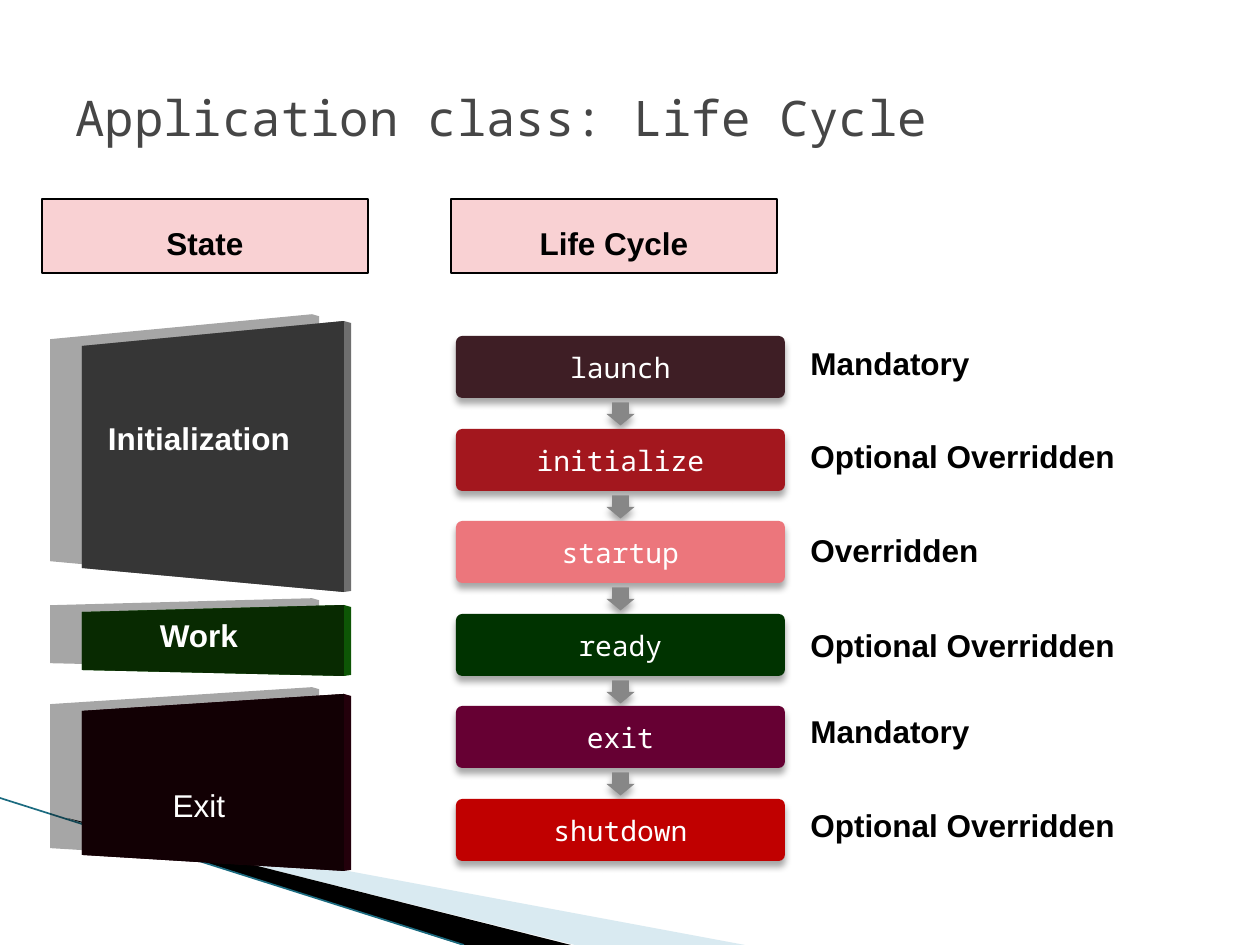
from dataclasses import dataclass

from lxml import etree
from pptx import Presentation
from pptx.dml.color import RGBColor
from pptx.enum.shapes import MSO_CONNECTOR, MSO_SHAPE
from pptx.enum.text import MSO_ANCHOR, PP_ALIGN
from pptx.oxml.ns import qn
from pptx.util import Emu, Pt

RECT, ROUNDED = MSO_SHAPE.RECTANGLE, MSO_SHAPE.ROUNDED_RECTANGLE
ARROW = MSO_SHAPE.RIGHT_ARROW
STRAIGHT = MSO_CONNECTOR.STRAIGHT
TOP, MIDDLE = MSO_ANCHOR.TOP, MSO_ANCHOR.MIDDLE
LEFT, CENTER = PP_ALIGN.LEFT, PP_ALIGN.CENTER

EMU_PER_PX = 914400 / 126
SANS, MONO = "Arial", "Noto Sans Mono"
BLACK, WHITE = "000000", "FFFFFF"

# Shared geometry, in px
STEP_LEFT, STEP_TOP, STEP_WIDTH, STEP_HEIGHT = 456, 336, 329, 62
STEP_PITCH = 92.6
ARROW_LENGTH, ARROW_WIDTH = 23, 28
PANEL_LEFT, PANEL_RIGHT, PANEL_DEPTH = 82, 344, 7
PANEL_TEXT_X = 199


@dataclass
class Step:
    method: str
    fill: str
    rule: str
    rule_top: int
    rule_width: int


@dataclass
class Panel:
    state: str
    face: str
    side: str
    left_edge: tuple[int, int]
    right_edge: tuple[int, int]
    text_y: int
    bold: bool = True


STEPS = [
    Step("launch", "3E1E25", "Mandatory", 338, 284),
    Step("initialize", "A3171E", "Optional Overridden", 431, 388),
    Step("startup", "EC767C", "Overridden", 525, 284),
    Step("ready", "003300", "Optional Overridden", 620, 388),
    Step("exit", "660033", "Mandatory", 706, 284),
    Step("shutdown", "C00000", "Optional Overridden", 800, 388),
]
PANELS = [
    Panel("Initialization", "363636", "6E6E6E", (346, 568), (321, 592), 438),
    Panel("Work", "082A01", "0D5505", (612, 670), (605, 676), 635),
    Panel("Exit", "120004", "23000B", (711, 855), (694, 871), 805, False),
]
HEADERS = {"State": 42, "Life Cycle": 451}


def px(length: float) -> Emu:
    return Emu(round(length * EMU_PER_PX))


def rgb(value: str) -> RGBColor:
    return RGBColor.from_string(value)


def paint(shape, fill: str, line: str | None = None) -> None:
    shape.shadow.inherit = False
    shape.fill.solid()
    shape.fill.fore_color.rgb = rgb(fill)
    if line:
        shape.line.color.rgb = rgb(line)
        shape.line.width = Pt(0.75)
    else:
        shape.line.fill.background()


def add_alpha(color, percent: int) -> None:
    etree.SubElement(color, qn("a:alpha"), val=str(percent * 1000))


def cast_shadow(shape, blur: float, distance: float, angle: int) -> None:
    effects = shape._element.spPr.find(qn("a:effectLst"))
    shadow = etree.SubElement(
        effects, qn("a:outerShdw"), blurRad=str(Pt(blur)), dist=str(Pt(distance)),
        dir=str(angle * 60000), algn="ctr", rotWithShape="0")
    add_alpha(etree.SubElement(shadow, qn("a:srgbClr"), val=BLACK), 35)


def write(shape, text: str, size: int, font: str, color: str, bold: bool = False,
          align=CENTER, anchor=MIDDLE, spacing: float = 1.0) -> None:
    frame = shape.text_frame
    frame.word_wrap = True
    frame.vertical_anchor = anchor
    paragraph = frame.paragraphs[0]
    paragraph.text = text
    paragraph.alignment = align
    paragraph.line_spacing = spacing
    paragraph.font.size = Pt(size)
    paragraph.font.name = font
    paragraph.font.bold = bold
    paragraph.font.color.rgb = rgb(color)


def add_box(slide, kind, left: int, top: int, width: int, height: int,
            fill: str, line: str | None = None):
    box = slide.shapes.add_shape(kind, px(left), px(top), px(width), px(height))
    paint(box, fill, line)
    return box


def add_polygon(slide, points: list[tuple[int, int]], fill: str):
    builder = slide.shapes.build_freeform(*points[0], scale=EMU_PER_PX)
    builder.add_line_segments(points[1:], close=True)
    polygon = builder.convert_to_shape()
    paint(polygon, fill)
    return polygon


def draw_corner(slide) -> None:
    pale = add_polygon(slide, [(69, 819), (745, 945), (575, 945)], "A0CBDC")
    add_alpha(pale._element.spPr.find(qn("a:solidFill"))[0], 40)
    add_polygon(slide, [(67, 818), (571, 945), (462, 945)], BLACK)
    edge = slide.shapes.add_connector(STRAIGHT, px(0), px(798), px(464), px(945))
    edge.line.color.rgb = rgb("1B6B80")
    edge.line.width = Pt(0.95)
    etree.SubElement(edge._element.spPr, qn("a:effectLst"))


def draw_step(slide, index: int, step: Step) -> None:
    top = STEP_TOP + round(index * STEP_PITCH)
    box = add_box(slide, ROUNDED, STEP_LEFT, top, STEP_WIDTH, STEP_HEIGHT, step.fill)
    box.adjustments[0] = 0.1
    cast_shadow(box, 4, 3, 90)
    write(box, step.method, 16, MONO, WHITE)

    if index < len(STEPS) - 1:
        arrow = add_box(slide, ARROW, STEP_LEFT + (STEP_WIDTH - ARROW_LENGTH) // 2,
                        top + STEP_HEIGHT + 2, ARROW_LENGTH, ARROW_WIDTH, "878787")
        arrow.rotation = 90
        arrow.adjustments[0] = 0.6
        cast_shadow(arrow, 4, 3, 90)

    rule = slide.shapes.add_textbox(px(798), px(step.rule_top), px(step.rule_width), px(50))
    write(rule, step.rule, 18, SANS, BLACK, True, LEFT, TOP)


def draw_panel(slide, panel: Panel) -> None:
    (left_top, left_bottom), (right_top, right_bottom) = panel.left_edge, panel.right_edge
    outer = PANEL_RIGHT + PANEL_DEPTH
    start, end = (PANEL_LEFT, left_top), (PANEL_LEFT, left_bottom)
    upper, lower = (PANEL_RIGHT, right_top), (PANEL_RIGHT, right_bottom)

    # Whole slab in the side colour, then the front face over it
    slab = add_polygon(slide, [start, upper, (outer, right_top + 2),
                               (outer, right_bottom - 1), lower, end], panel.side)
    cast_shadow(slab, 0, 18.7, 192)
    face = add_polygon(slide, [start, upper, lower, end], panel.face)

    # Margins move the label off the centre of the face
    frame = face.text_frame
    lift = right_top + right_bottom - 2 * panel.text_y
    frame.margin_left = 0
    frame.margin_right = px(PANEL_LEFT + PANEL_RIGHT - 2 * PANEL_TEXT_X)
    frame.margin_bottom = px(max(lift, 0))
    frame.margin_top = px(max(-lift, 0))
    write(face, panel.state, 18, SANS, WHITE, panel.bold)


def main() -> None:
    deck = Presentation()
    deck.slide_width, deck.slide_height = px(1260), px(945)
    slide = deck.slides.add_slide(deck.slide_layouts[5])

    draw_corner(slide)

    # Title
    title = slide.shapes.title
    title.left, title.top, title.width, title.height = px(63), px(38), px(1134), px(158)
    write(title, "Application class: Life Cycle", 28, MONO, "464646", align=LEFT)

    # Life cycle steps with their rules, then the states
    for index, step in enumerate(STEPS):
        draw_step(slide, index, step)
    for panel in PANELS:
        draw_panel(slide, panel)

    # Column headers
    for heading, left in HEADERS.items():
        header = add_box(slide, RECT, left, 199, 326, 74, "F9D1D3", BLACK)
        write(header, heading, 18, SANS, BLACK, True, anchor=TOP, spacing=1.5)

    deck.save("out.pptx")


if __name__ == "__main__":
    main()
